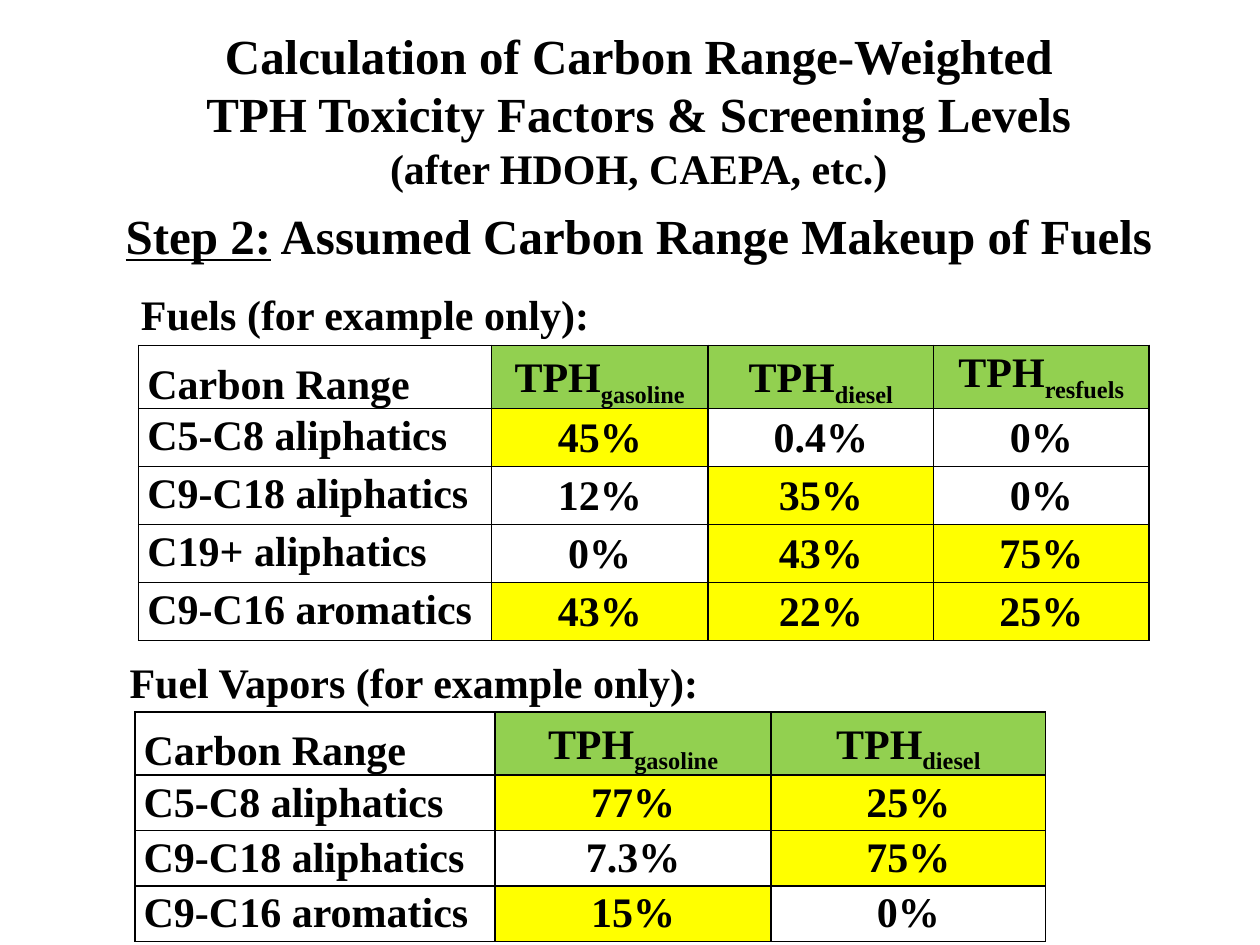
import pptx
import pptx.dml.color
import pptx.enum.text
import pptx.oxml
import pptx.oxml.ns
import pptx.util

Inches = pptx.util.Inches
ALIGN = pptx.enum.text.PP_ALIGN
ANCHOR = pptx.enum.text.MSO_ANCHOR
FONT = "Times New Roman"
BLACK, GREEN, YELLOW = "000000", "92D050", "FFFF00"
HIGHLIGHT_FROM = 15

FUELS = [
    ["Carbon Range", "gasoline", "diesel", "resfuels"],
    ["C5-C8 aliphatics", "45%", "0.4%", "0%"],
    ["C9-C18 aliphatics", "12%", "35%", "0%"],
    ["C19+ aliphatics", "0%", "43%", "75%"],
    ["C9-C16 aromatics", "43%", "22%", "25%"],
]
VAPORS = [
    ["Carbon Range", "gasoline", "diesel"],
    ["C5-C8 aliphatics", "77%", "25%"],
    ["C9-C18 aliphatics", "7.3%", "75%"],
    ["C9-C16 aromatics", "15%", "0%"],
]


def color(value):
    """Return the RGB colour for a hex string."""
    return pptx.dml.color.RGBColor.from_string(value)


def set_values(target, values):
    """Set each attribute of target from a dict."""
    for name, value in values.items():
        setattr(target, name, value)


def add_span(para, text, size=24, subscript=False, **values):
    """Add a bold black run to a paragraph."""
    span = para.add_run()
    span.text = text
    format_values = {"name": FONT, "size": pptx.util.Pt(size), "bold": True}
    set_values(span.font, {**format_values, **values})
    span.font.color.rgb = color(BLACK)
    if subscript:
        span._r.get_or_add_rPr().set("baseline", "-25000")


def add_text(page, place, lines, align=ALIGN.LEFT, anchor=ANCHOR.MIDDLE, wrap=True):
    """Add a text box whose lines are lists of (text, format) spans."""
    box = page.shapes.add_textbox(*map(Inches, place))
    frame = box.text_frame
    set_values(frame, {"word_wrap": wrap, "vertical_anchor": anchor,
                       "auto_size": pptx.enum.text.MSO_AUTO_SIZE.SHAPE_TO_FIT_TEXT})
    for number, spans in enumerate(lines):
        para = frame.add_paragraph() if number else frame.paragraphs[0]
        para.alignment = align
        for text, values in spans:
            add_span(para, text, **values)


def add_borders(cell):
    """Draw a thin black line on every side of a cell."""
    properties = cell._tc.get_or_add_tcPr()
    for side in ("lnL", "lnR", "lnT", "lnB"):
        properties.append(pptx.oxml.parse_xml(
            f'<a:{side} {pptx.oxml.ns.nsdecls("a")} w="12700"><a:solidFill>'
            f'<a:srgbClr val="{BLACK}"/></a:solidFill></a:{side}>'))


def fill_cell(cell, fill):
    """Fill a cell with a colour, or leave it clear."""
    if fill:
        cell.fill.solid()
        cell.fill.fore_color.rgb = color(fill)
    else:
        cell.fill.background()


def write_cell(cell, text, is_header, is_label, label_align, spacing):
    """Write, align, frame and fill one table cell."""
    set_values(cell, {"margin_left": Inches(0.07), "margin_right": Inches(0.07),
                      "margin_top": 0, "margin_bottom": 0,
                      "vertical_anchor": ANCHOR.BOTTOM if is_header else ANCHOR.TOP})
    para = cell.text_frame.paragraphs[0]
    set_values(para, {"alignment": label_align if is_label else ALIGN.CENTER,
                      "line_spacing": spacing})
    fill = None
    if is_header and not is_label:
        add_span(para, "TPH")
        add_span(para, text, subscript=True)
        fill = GREEN
    else:
        add_span(para, text)
        if not is_label and float(text.rstrip("%")) >= HIGHLIGHT_FROM:
            fill = YELLOW
    add_borders(cell)
    fill_cell(cell, fill)


def add_share_table(page, left, top, widths, row_height, rows, label_align, value_spacing):
    """Add a table of carbon range shares and return it."""
    heights = [0.5] + [row_height] * (len(rows) - 1)
    frame = page.shapes.add_table(len(rows), len(widths), Inches(left), Inches(top),
                                  Inches(sum(widths)), Inches(sum(heights)))
    table = frame.table
    set_values(table, {"first_row": False, "horz_banding": False})
    for column, width in zip(table.columns, widths):
        column.width = Inches(width)
    for row, height in zip(table.rows, heights):
        row.height = Inches(height)
    for r, texts in enumerate(rows):
        for c, text in enumerate(texts):
            is_header, is_label = r == 0, c == 0
            write_cell(table.cell(r, c), text, is_header, is_label,
                       ALIGN.LEFT if is_header else label_align,
                       1.1 if is_header or is_label else value_spacing)
    return table


def main():
    """Build the slide and save it."""
    deck = pptx.Presentation()
    set_values(deck, {"slide_width": Inches(10), "slide_height": Inches(7.5)})
    page = deck.slides.add_slide(deck.slide_layouts[6])
    large = {"size": 28}
    add_text(page, (1.5, 0.15, 7.14, 1.45), [
        [("Calculation of Carbon Range-Weighted", large)],
        [("TPH Toxicity Factors & Screening Levels", large)],
        [("(after HDOH, CAEPA, etc.)", {})],
    ], ALIGN.CENTER, ANCHOR.TOP, wrap=False)
    add_text(page, (0.88, 1.58, 8.38, 0.57), [
        [("Step 2:", {"size": 28, "underline": True}),
         (" Assumed Carbon Range Makeup of Fuels", large)],
    ], ALIGN.CENTER)
    fuels = add_share_table(page, 1.1, 2.74, [2.8, 1.72, 1.79, 1.71], 0.46, FUELS,
                            ALIGN.JUSTIFY, 1.15)
    fuels.cell(0, 3).vertical_anchor = ANCHOR.TOP
    add_text(page, (1.02, 2.24, 3.9, 0.5), [[("Fuels (for example only):", {})]])
    add_share_table(page, 1.07, 5.65, [2.86, 2.19, 2.18], 0.44, VAPORS, ALIGN.LEFT, 1.1)
    add_text(page, (0.93, 5.16, 4.79, 0.5), [[("Fuel Vapors (for example only):", {})]])
    deck.save("out.pptx")


if __name__ == "__main__":
    main()
